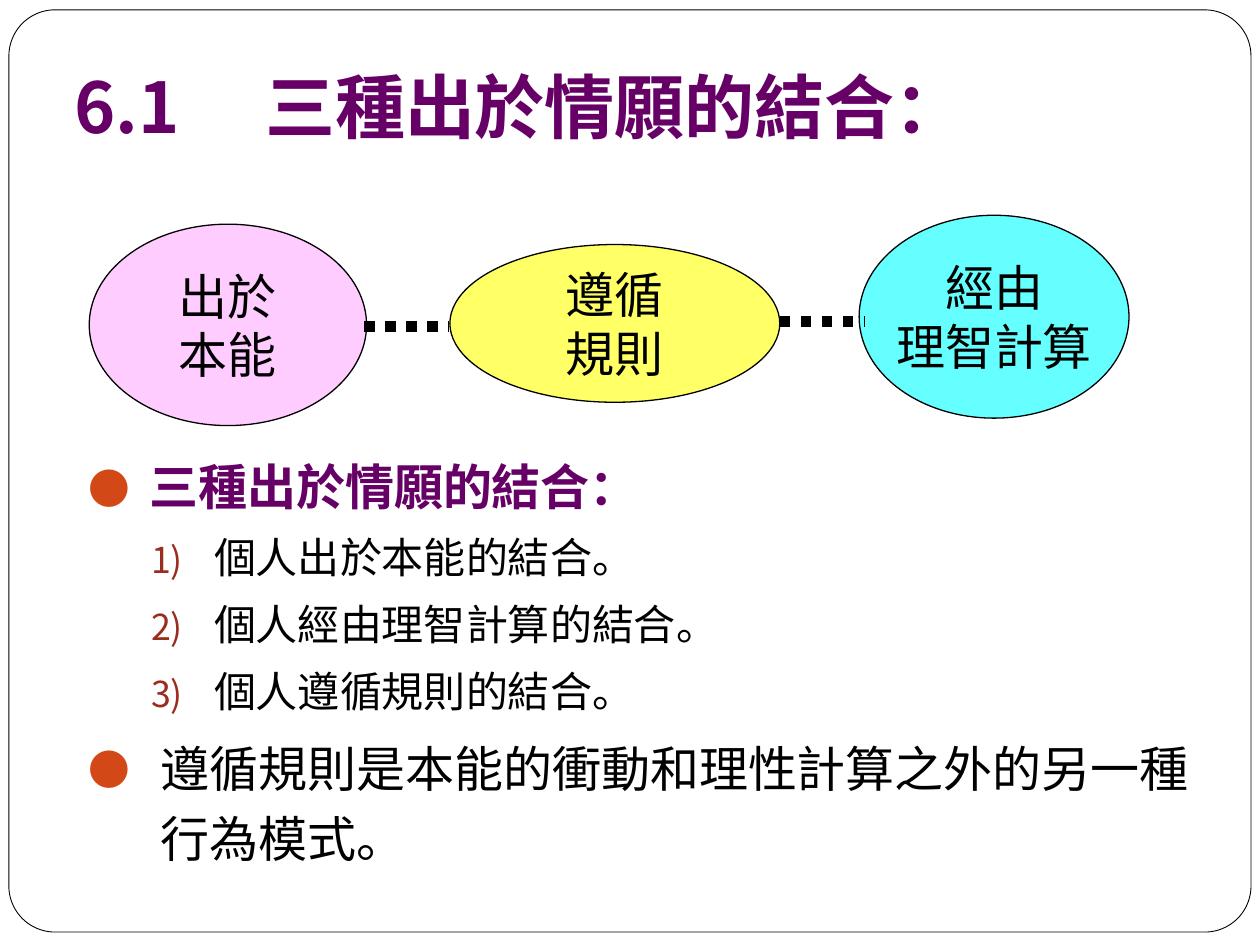
"""Build the slide on three kinds of voluntary union."""
import dataclasses
import typing

import lxml.etree
import pptx
import pptx.dml.color
import pptx.enum.dml
import pptx.enum.shapes
import pptx.enum.text
import pptx.oxml.ns
import pptx.util

Cm = pptx.util.Cm
Pt = pptx.util.Pt
Kind = pptx.enum.shapes.MSO_SHAPE
Anchor = pptx.enum.text.MSO_ANCHOR
Align = pptx.enum.text.PP_ALIGN


@dataclasses.dataclass(frozen=True)
class Theme:
    """Colours, fonts and type sizes."""
    ink: str = "000000"
    paper: str = "FFFFFF"
    plum: str = "660066"
    dot: str = "D34817"
    number: str = "9B2D1F"
    pink: str = "FFCCFF"
    yellow: str = "FFFF66"
    cyan: str = "66FFFF"
    asian: str = "Noto Sans CJK TC"
    serif: str = "Times New Roman"
    sans: str = "DejaVu Sans"
    title: int = 40
    large: int = 28
    small: int = 24


@dataclasses.dataclass(frozen=True)
class Box:
    """A place on the slide in centimetres."""
    left: float
    top: float
    width: float
    height: float

    def cm(self) -> tuple:
        """Return the four lengths."""
        return tuple(Cm(n) for n in dataclasses.astuple(self))


@dataclasses.dataclass(frozen=True)
class Oval:
    """A labelled ellipse."""
    lines: tuple
    box: Box
    fill: str


@dataclasses.dataclass(frozen=True)
class Link:
    """A level dotted line."""
    start: float
    end: float
    y: float


@dataclasses.dataclass(frozen=True)
class Item:
    """A list entry with its hanging indent in centimetres."""
    text: str
    level: int
    left: float
    hang: float
    size: int
    font: str
    color: str
    bold: bool = False


LOOK = Theme()
OVALS = (
    Oval(("出於", "本能"), Box(1.8, 4.52, 5.59, 4.06), LOOK.pink),
    Oval(("經由", "理智計算"), Box(17.32, 4.34, 5.44, 4.09), LOOK.cyan),
    Oval(("遵循", "規則"), Box(9.07, 4.93, 6.65, 3.18), LOOK.yellow),
)
LINKS = (Link(7.34, 9.04, 6.58), Link(15.72, 17.42, 6.48))
STEPS = ("個人出於本能的結合。", "個人經由理智計算的結合。", "個人遵循規則的結合。")
ITEMS = (
    Item("三種出於情願的結合：", 0, 1.24, 1.24, LOOK.large,
         LOOK.asian, LOOK.plum, True),
    *(Item(step, 1, 2.54, 1.27, LOOK.small, LOOK.serif, LOOK.ink)
      for step in STEPS),
    Item("遵循規則是本能的衝動和理性計算之外的另一種行為模式。", 0, 1.47, 1.47,
         LOOK.large, LOOK.serif, LOOK.ink),
)


def rgb(code: str) -> pptx.dml.color.RGBColor:
    """Turn a hex code into a colour."""
    return pptx.dml.color.RGBColor.from_string(code)


def add(parent: typing.Any, tag: str, **attrs: str) -> typing.Any:
    """Append a DrawingML element."""
    return lxml.etree.SubElement(parent, pptx.oxml.ns.qn(tag), attrs)


def write(para: typing.Any, text: str, *, size: int, font: str,
          color: str = LOOK.ink, bold: bool = False,
          align: typing.Any = Align.LEFT) -> None:
    """Write one formatted run into a paragraph."""
    para.alignment = align
    run = para.add_run()
    run.text = text
    run.font.size = Pt(size)
    run.font.bold = bold
    run.font.name = font
    run.font.color.rgb = rgb(color)
    add(run.font._element, "a:ea", typeface=LOOK.asian)


def place(shape: typing.Any, box: Box) -> None:
    """Move and size a placeholder."""
    shape.left, shape.top, shape.width, shape.height = box.cm()
    shape.text_frame.word_wrap = True
    shape.text_frame.auto_size = pptx.enum.text.MSO_AUTO_SIZE.NONE


def draw(slide: typing.Any, kind: typing.Any, box: Box,
         fill: str, weight: float) -> typing.Any:
    """Draw a filled and outlined shape."""
    shape = slide.shapes.add_shape(kind, *box.cm())
    shape.shadow.inherit = False
    shape.fill.solid()
    shape.fill.fore_color.rgb = rgb(fill)
    shape.line.color.rgb = rgb(LOOK.ink)
    shape.line.width = Pt(weight)
    return shape


def border(slide: typing.Any) -> None:
    """Draw the rounded border behind everything."""
    shape = draw(slide, Kind.ROUNDED_RECTANGLE,
                 Box(0.18, 0.2, 25.04, 18.59), LOOK.paper, 0.5)
    shape.adjustments[0] = 0.05
    shape.element.getparent().insert(2, shape.element)


def head(slide: typing.Any) -> None:
    """Fill the title."""
    title = slide.shapes.title
    place(title, Box(1.24, 0.74, 22.2, 2.49))
    frame = title.text_frame
    frame.vertical_anchor = Anchor.BOTTOM
    frame.margin_bottom = Cm(0.25)
    write(frame.paragraphs[0], "6.1 　三種出於情願的結合：", size=LOOK.title,
          font=LOOK.asian, color=LOOK.plum, bold=True)


def bullet(para: typing.Any, item: Item) -> None:
    """Set the indent and the dot or number of a list entry."""
    props = para._p.get_or_add_pPr()
    props.set("marL", str(Cm(item.left)))
    props.set("indent", str(-Cm(item.hang)))
    tint = add(props, "a:buClr")
    add(tint, "a:srgbClr", val=LOOK.number if item.level else LOOK.dot)
    add(props, "a:buSzPct", val="85000")
    add(props, "a:buFont", typeface=LOOK.asian)
    if item.level:
        add(props, "a:buAutoNum", type="arabicParenR")
    else:
        add(props, "a:buChar", char="●")


def listing(slide: typing.Any) -> None:
    """Fill the body list."""
    body = slide.placeholders[1]
    place(body, Box(1.52, 8.84, 23.32, 9.37))
    frame = body.text_frame
    for i, item in enumerate(ITEMS):
        para = frame.add_paragraph() if i else frame.paragraphs[0]
        para.level = item.level
        para.line_spacing = 1.2
        para.space_before = Pt(3.7 if item.level else 5.8)
        bullet(para, item)
        write(para, item.text, size=item.size, font=item.font,
              color=item.color, bold=item.bold)


def bubble(slide: typing.Any, oval: Oval) -> None:
    """Draw an ellipse with its label."""
    frame = draw(slide, Kind.OVAL, oval.box, oval.fill, 0.75).text_frame
    frame.word_wrap = False
    frame.vertical_anchor = Anchor.MIDDLE
    for i, line in enumerate(oval.lines):
        para = frame.add_paragraph() if i else frame.paragraphs[0]
        write(para, line, size=LOOK.large, font=LOOK.sans, align=Align.CENTER)


def join(slide: typing.Any, link: Link) -> None:
    """Draw a dotted line between two ellipses."""
    line = slide.shapes.add_connector(
        pptx.enum.shapes.MSO_CONNECTOR.STRAIGHT,
        Cm(link.start), Cm(link.y), Cm(link.end), Cm(link.y))
    line.line.color.rgb = rgb(LOOK.ink)
    line.line.width = Pt(6)
    line.line.dash_style = pptx.enum.dml.MSO_LINE.ROUND_DOT
    add(line._element.spPr, "a:effectLst")


def main() -> None:
    """Build and save the slide."""
    deck = pptx.Presentation()
    deck.slide_width, deck.slide_height = Cm(25.4), Cm(19.05)
    slide = deck.slides.add_slide(deck.slide_layouts[1])
    border(slide)
    head(slide)
    listing(slide)
    for oval in OVALS:
        bubble(slide, oval)
    for link in LINKS:
        join(slide, link)
    deck.save("out.pptx")


if __name__ == "__main__":
    main()
